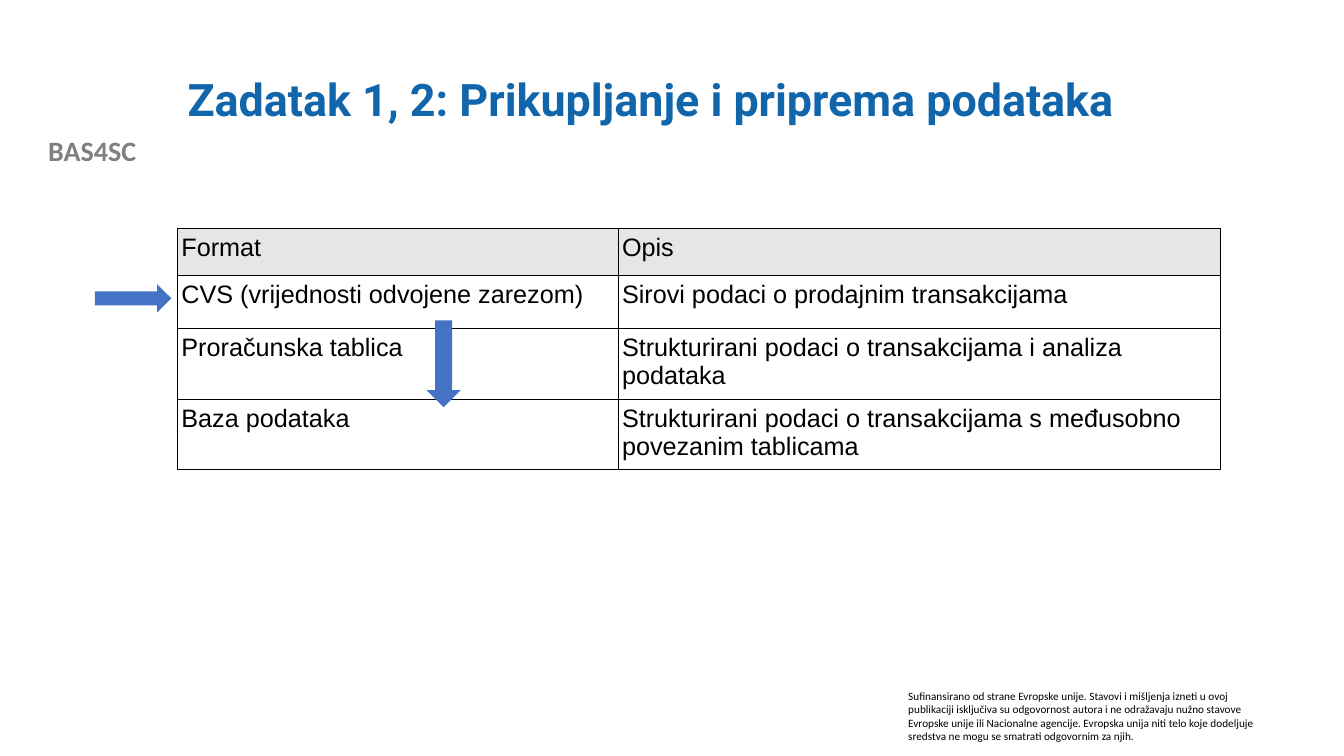
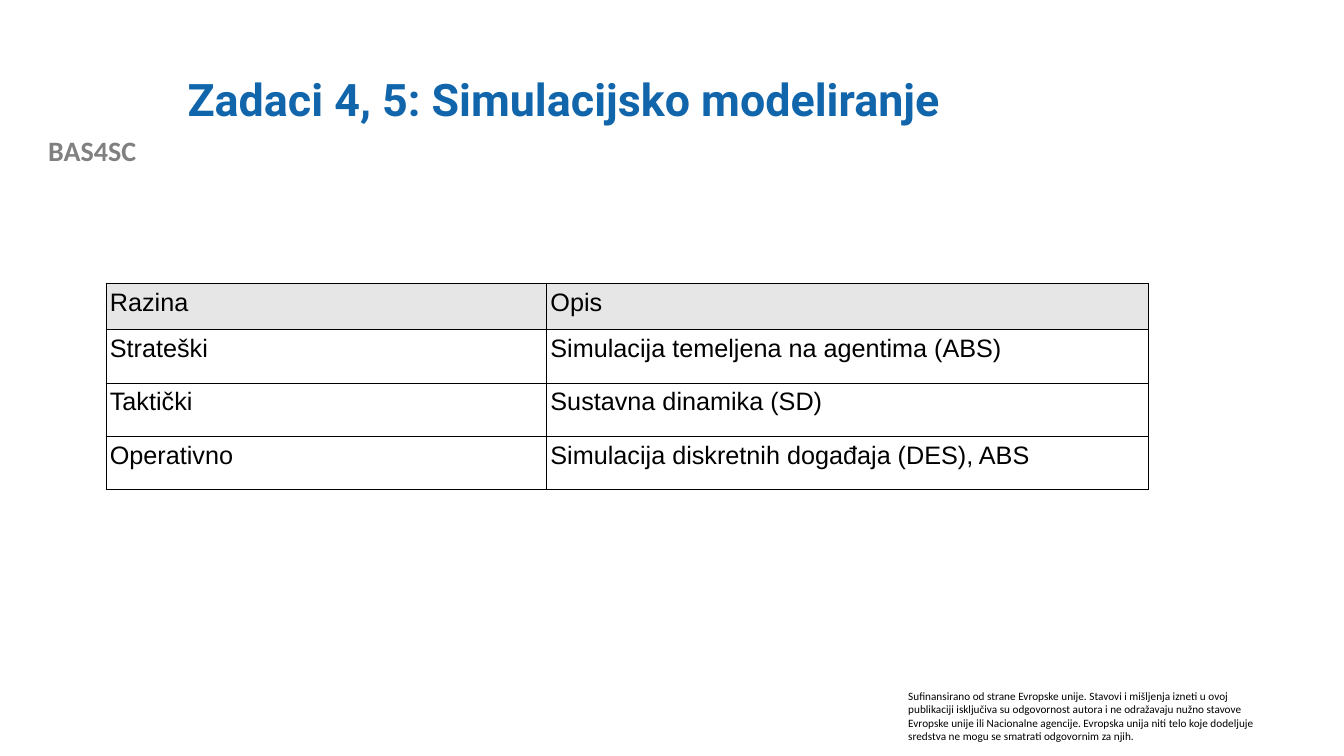
import pptx
import pptx.dml.color
import pptx.enum.shapes
import pptx.enum.text
import pptx.oxml
import pptx.oxml.ns
import pptx.util

Inches = pptx.util.Inches
Pt = pptx.util.Pt
ARROWS = pptx.enum.shapes.MSO_SHAPE
ALIGN = pptx.enum.text.PP_ALIGN
ANCHOR = pptx.enum.text.MSO_ANCHOR
AUTO_SIZE = pptx.enum.text.MSO_AUTO_SIZE

# Shared look
TITLE_BLUE = "1065AB"
ARROW_BLUE = "4472C4"
PROJECT_GREY = "808080"
HEADER_GREY = "E7E6E6"
BLACK = "000000"

TITLE_BOX = (1.76, 0.4, 10.66, 1.22)
PROJECT_BOX = (0, 1.28, 1.83, 0.43)
FUNDING_BOX = (8.91, 6.79, 3.74, 0.64)
COLUMN_WIDTHS = (4.37, 5.97)
HEADER_HEIGHT = 0.46
ROW_HEIGHT = 0.53
BORDER_WIDTH = 0.57

PROJECT = "BAS4SC"
FUNDING = (
    "Sufinansirano od strane Evropske unije. Stavovi i mišljenja izneti u ovoj "
    "publikaciji isključiva su odgovornost autora i ne odražavaju nužno stavove "
    "Evropske unije ili Nacionalne agencije. Evropska unija niti telo koje dodeljuje "
    "sredstva ne mogu se smatrati odgovornim za njih."
)

DATA_FORMATS = [
    ("Format", "Opis"),
    ("CVS (vrijednosti odvojene zarezom)", "Sirovi podaci o prodajnim transakcijama"),
    ("Proračunska tablica", "Strukturirani podaci o transakcijama i analiza podataka"),
    ("Baza podataka",
     "Strukturirani podaci o transakcijama s međusobno povezanim tablicama"),
]
SIMULATION_LEVELS = [
    ("Razina", "Opis"),
    ("Strateški", "Simulacija temeljena na agentima (ABS)"),
    ("Taktički", "Sustavna dinamika (SD)"),
    ("Operativno", "Simulacija diskretnih događaja (DES), ABS"),
]


def rgb(color):
    return pptx.dml.color.RGBColor.from_string(color)


def inches(box):
    return [Inches(length) for length in box]


def write(frame, text, font="Arial", size=18, color=BLACK, bold=False,
          align=ALIGN.LEFT, spacing=None):
    """Fill a text frame with one formatted paragraph."""
    frame.word_wrap = True
    paragraph = frame.paragraphs[0]
    paragraph.alignment = align
    paragraph.line_spacing = spacing
    run = paragraph.add_run()
    run.text = text
    run.font.name = font
    run.font.size = Pt(size)
    run.font.bold = bold
    run.font.color.rgb = rgb(color)


def add_text(slide, box, text, **style):
    frame = slide.shapes.add_textbox(*inches(box)).text_frame
    write(frame, text, **style)
    frame.auto_size = AUTO_SIZE.SHAPE_TO_FIT_TEXT


def add_titled_slide(deck, heading):
    """Add a slide with its title, project name and funding note."""
    slide = deck.slides.add_slide(deck.slide_layouts[5])
    add_text(slide, PROJECT_BOX, PROJECT, font="Calibri", size=20,
             color=PROJECT_GREY, bold=True, align=ALIGN.CENTER)
    add_text(slide, FUNDING_BOX, FUNDING, font="Calibri", size=8)

    title = slide.shapes.title
    title.left, title.top, title.width, title.height = inches(TITLE_BOX)
    write(title.text_frame, heading, font="Roboto", size=32,
          color=TITLE_BLUE, bold=True, spacing=0.9)
    title.text_frame.auto_size = AUTO_SIZE.NONE
    title.text_frame.vertical_anchor = ANCHOR.MIDDLE
    return slide


def add_borders(cell):
    """Draw all four edges; they must precede the fill in the cell XML."""
    properties = cell._tc.get_or_add_tcPr()
    for position, edge in enumerate(("lnL", "lnR", "lnT", "lnB")):
        properties.insert(position, pptx.oxml.parse_xml(
            f'<a:{edge} {pptx.oxml.ns.nsdecls("a")} w="{Pt(BORDER_WIDTH)}">'
            f'<a:solidFill><a:srgbClr val="{BLACK}"/></a:solidFill></a:{edge}>'))


def add_grid(slide, left, top, rows):
    """Place a bordered table with a grey header row."""
    height = HEADER_HEIGHT + ROW_HEIGHT * (len(rows) - 1)
    table = slide.shapes.add_table(
        len(rows), len(COLUMN_WIDTHS),
        *inches((left, top, sum(COLUMN_WIDTHS), height))).table
    table.first_row = table.horz_banding = False
    for column, width in zip(table.columns, COLUMN_WIDTHS):
        column.width = Inches(width)
    for r, texts in enumerate(rows):
        table.rows[r].height = Inches(ROW_HEIGHT if r else HEADER_HEIGHT)
        for c, text in enumerate(texts):
            cell = table.cell(r, c)
            cell.margin_left = cell.margin_right = Inches(0.04)
            write(cell.text_frame, text)
            if r:
                cell.fill.background()
            else:
                cell.fill.solid()
                cell.fill.fore_color.rgb = rgb(HEADER_GREY)
            add_borders(cell)


def add_arrow(slide, kind, box):
    arrow = slide.shapes.add_shape(kind, *inches(box))
    arrow.shadow.inherit = False
    arrow.fill.solid()
    arrow.fill.fore_color.rgb = rgb(ARROW_BLUE)
    arrow.line.fill.background()


def add_data_slide(deck, left, top):
    """Data formats, with arrows from the raw file to the database."""
    slide = add_titled_slide(deck, "Zadatak 1, 2: Prikupljanje i priprema podataka")
    add_grid(slide, left, top, DATA_FORMATS)
    add_arrow(slide, ARROWS.RIGHT_ARROW, (left - 0.82, top + 0.55, 0.76, 0.28))
    add_arrow(slide, ARROWS.DOWN_ARROW, (left + 2.47, top + 0.91, 0.34, 0.86))


def add_simulation_slide(deck, left, top):
    """Simulation methods by planning level."""
    slide = add_titled_slide(deck, "Zadaci 4, 5: Simulacijsko modeliranje")
    add_grid(slide, left, top, SIMULATION_LEVELS)


def main():
    deck = pptx.Presentation()
    deck.slide_width, deck.slide_height = inches((13.33, 7.5))
    add_data_slide(deck, 1.76, 2.27)
    add_simulation_slide(deck, 1.05, 2.81)
    deck.save("out.pptx")


if __name__ == "__main__":
    main()
